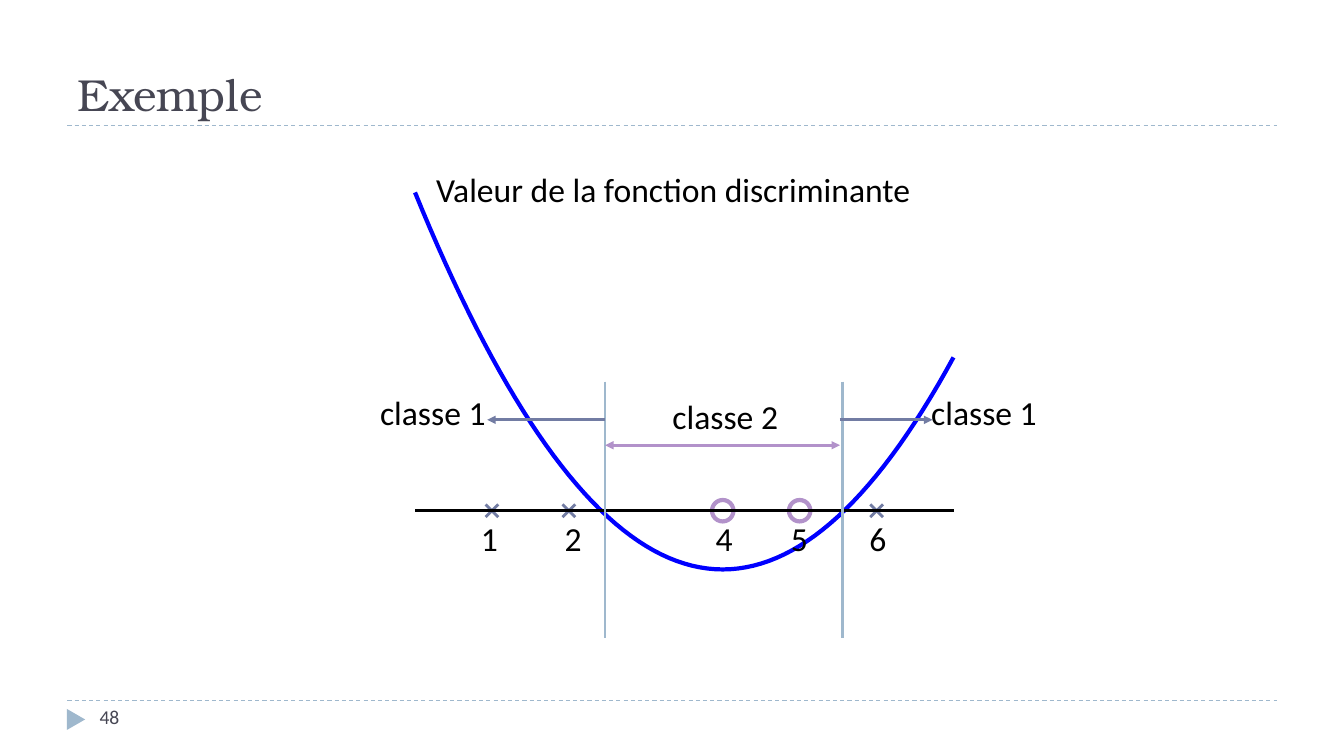
import pptx
import pptx.dml.color
import pptx.enum.dml
import pptx.enum.shapes
import pptx.enum.text
import pptx.oxml.ns
import pptx.util
from lxml import etree
from pptx.util import Cm

PALE, SLATE, VIOLET, BLUE = "9FB8CD", "727CA3", "B292CA", "0000FF"
INK, BLACK = "464653", "000000"
SHAPES = pptx.enum.shapes.MSO_SHAPE
ANCHORS = pptx.enum.text.MSO_ANCHOR


def colour(code):
    return pptx.dml.color.RGBColor.from_string(code)


def add_line(page, start, end, code, width, dashed=False, ends=()):
    """Draw a straight line; ends holds headEnd and/or tailEnd for arrowheads."""
    line = page.shapes.add_connector(
        pptx.enum.shapes.MSO_CONNECTOR.STRAIGHT, *(Cm(v) for v in (*start, *end)))
    line.line.color.rgb = colour(code)
    line.line.width = pptx.util.Pt(width)
    if dashed:
        line.line.dash_style = pptx.enum.dml.MSO_LINE.DASH
    properties = line._element.spPr
    outline = line.line._get_or_add_ln()
    for end_name in ends:
        etree.SubElement(outline, pptx.oxml.ns.qn("a:" + end_name), type="triangle")
    etree.SubElement(properties, pptx.oxml.ns.qn("a:effectLst"))


def add_text(page, box, text, size, code=BLACK, font="Calibri",
             anchor=ANCHORS.TOP, wrap=False):
    frame = page.shapes.add_textbox(*(Cm(v) for v in box)).text_frame
    frame.text = text
    frame.word_wrap = wrap
    frame.vertical_anchor = anchor
    span = frame.paragraphs[0].runs[0]
    span.font.size = pptx.util.Pt(size)
    span.font.name = font
    span.font.color.rgb = colour(code)


def add_header(page, box):
    left, top, width, height = box
    bottom = top + height
    add_line(page, (left, bottom), (left + width, bottom), PALE, 0.75, dashed=True)
    add_text(page, box, "Exemple", 32, INK, "TeX Gyre Bonum", ANCHORS.BOTTOM, wrap=True)


def add_footer(page, box):
    left, top, width, height = box
    add_line(page, (left, top), (left + width, top), PALE, 0.75, dashed=True)
    marker = page.shapes.add_shape(
        SHAPES.ISOSCELES_TRIANGLE, Cm(left - 0.05), Cm(top + 0.25), Cm(0.53), Cm(0.46))
    marker.rotation = 90
    marker.shadow.inherit = False
    marker.fill.solid()
    marker.fill.fore_color.rgb = colour(PALE)
    marker.line.fill.background()
    add_text(page, (left + 0.56, top, 7.34, height), "48", 14, INK, wrap=True)


def add_cross(page, x, y, radius=0.16):
    for rise in (radius, -radius):
        add_line(page, (x - radius, y - rise), (x + radius, y + rise), SLATE, 2)


def add_ring(page, x, y, radius=0.27):
    ring = page.shapes.add_shape(
        SHAPES.OVAL, Cm(x - radius), Cm(y - radius), Cm(2 * radius), Cm(2 * radius))
    ring.shadow.inherit = False
    ring.fill.background()
    ring.line.color.rgb = colour(VIOLET)
    ring.line.width = pptx.util.Pt(3)


def add_parabola(page, box, vertex=4, last=7, steps=70):
    """Plot the discriminant (x - vertex)² from 0 to last, filling the box."""
    left, top, width, height = box
    points = []
    for step in range(steps + 1):
        share = step / steps
        rise = height * (share * last / vertex - 1) ** 2
        points.append((Cm(left + width * share), Cm(top + height - rise)))
    builder = page.shapes.build_freeform(*points[0])
    builder.add_line_segments(points[1:], close=False)
    curve = builder.convert_to_shape()
    curve.shadow.inherit = False
    curve.fill.background()
    curve.line.color.rgb = colour(BLUE)
    curve.line.width = pptx.util.Pt(3)


def add_plot(page, box):
    left, top, width, height = box
    axis = top + height - 1.48

    def across(value):
        return left + width * value / 7

    # Sample value, centre of its label, marker of its class
    samples = [(1, 0.97, add_cross), (2, 2.06, add_cross), (4, 4.02, add_ring),
               (5, 5, add_ring), (6, 6.02, add_cross)]
    for value, label_at, add_marker in samples:
        add_marker(page, across(value), axis)
    add_parabola(page, box)
    add_line(page, (left, axis), (left + width, axis), BLACK, 0)

    add_text(page, (left + 0.28, top - 0.71, 12.55, 1.27),
             "Valeur de la fonction discriminante", 24)
    for value, label_at, add_marker in samples:
        add_text(page, (across(label_at) - 0.47, axis + 0.05, 0.94, 1.3), str(value), 24)

    first, second = across(2.47), across(5.56)
    for border in (first, second):
        add_line(page, (border, axis - 3.25), (border, axis + 3.2), PALE, 2)
    for text, label_left, rise in [("classe 2", first + 1.45, 3.02),
                                   ("classe 1", second + 1.98, 3.12),
                                   ("classe 1", first - 5.92, 3.12)]:
        add_text(page, (label_left, axis - rise, 3.2, 1.3), text, 24)

    outer, inner = axis - 2.29, axis - 1.65
    inside = second - 0.07
    add_line(page, (first, outer), (first - 2.97, outer), SLATE, 2, ends=["tailEnd"])
    add_line(page, (inside, outer), (inside + 2.33, outer), SLATE, 2, ends=["tailEnd"])
    add_line(page, (first, inner), (inside, inner), VIOLET, 2,
             ends=["headEnd", "tailEnd"])


def main():
    deck = pptx.Presentation()
    deck.slide_width, deck.slide_height = Cm(33.87), Cm(19.05)
    page = deck.slides.add_slide(deck.slide_layouts[6])
    add_header(page, (1.7, 0.43, 30.48, 2.74))
    add_footer(page, (1.7, 17.65, 30.48, 1.02))
    add_plot(page, (10.46, 4.85, 13.57, 9.5))
    deck.save("out.pptx")


if __name__ == "__main__":
    main()
